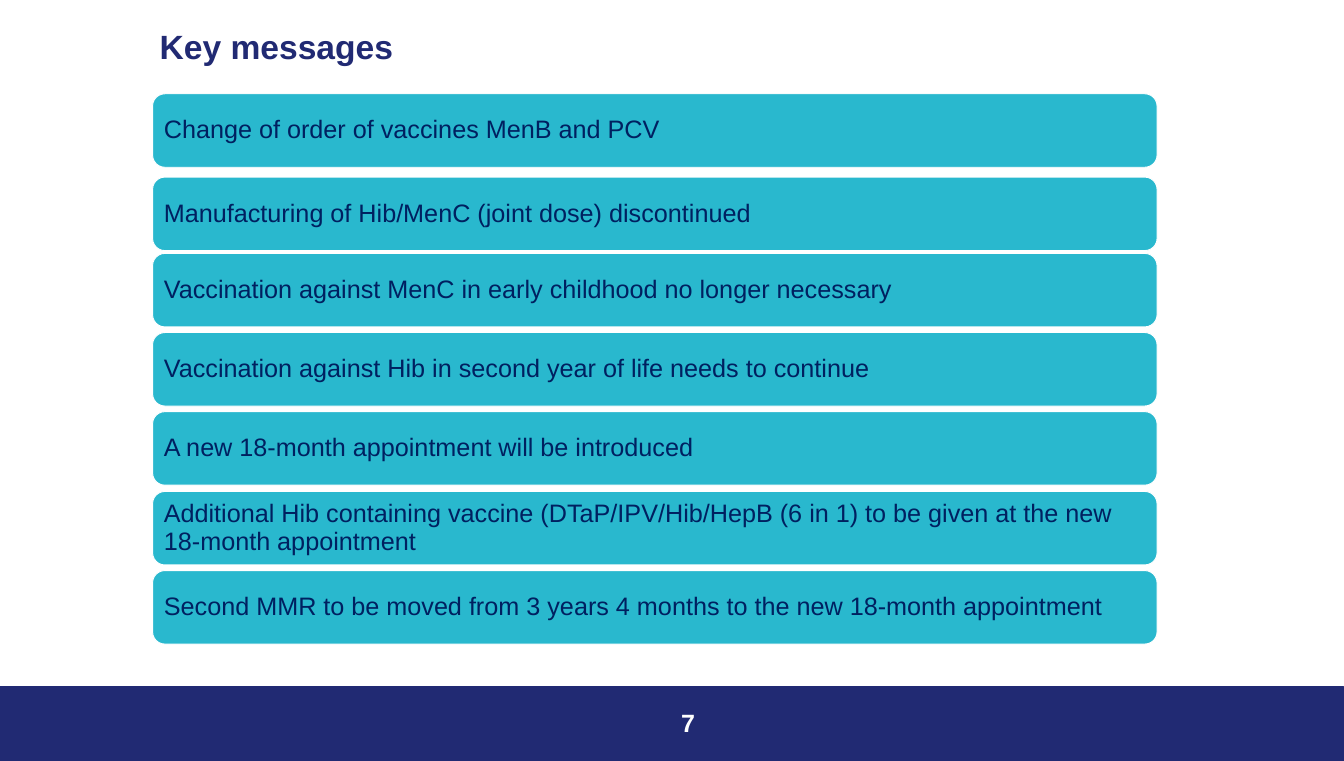
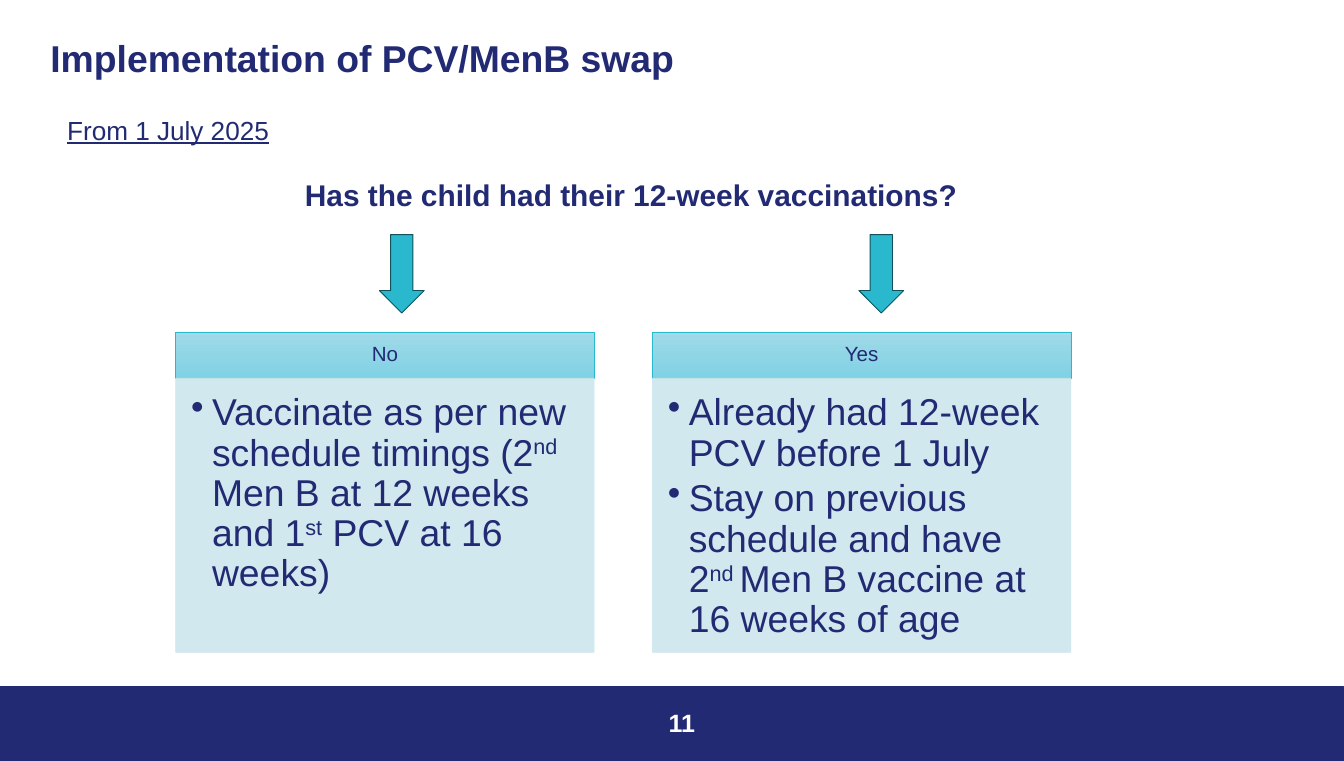
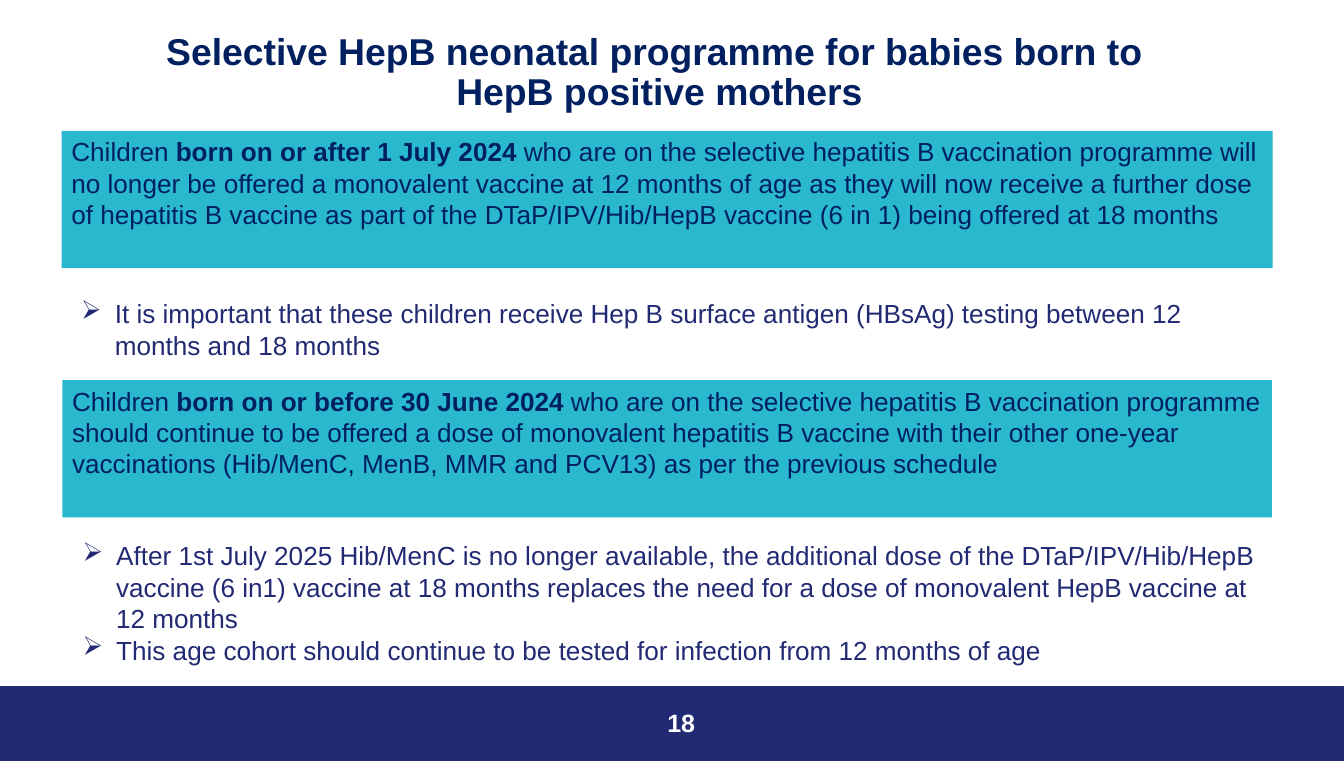
from lxml.etree import SubElement
from pptx import Presentation
from pptx.dml.color import RGBColor
from pptx.enum.shapes import MSO_SHAPE
from pptx.enum.text import MSO_ANCHOR, PP_ALIGN
from pptx.oxml.ns import qn
from pptx.util import Pt

PX = 9525
NAVY = "212A73"
INK = "002060"
TEAL = "29B8CE"
PALE = "CDE6ED"
WHITE = "FFFFFF"


def colour(code):
    return RGBColor.from_string(code)


def place(page, frame, paras=(), kind=None, fill=None, line=None, line_width=1, size=28,
          ink=NAVY, bold=False, align=PP_ALIGN.LEFT, anchor=MSO_ANCHOR.TOP,
          insets=(10, 5, 10, 5), spacing=None, after=None, bullet=None, indent=0):
    left, top, width, height = [value * PX for value in frame]
    if kind is None:
        box = page.shapes.add_textbox(left, top, width, height)
    else:
        box = page.shapes.add_shape(kind, left, top, width, height)
        box.shadow.inherit = False
        if fill:
            box.fill.solid()
            box.fill.fore_color.rgb = colour(fill)
        if line:
            box.line.color.rgb = colour(line)
            box.line.width = Pt(line_width)
        else:
            box.line.fill.background()
    text = box.text_frame
    text.word_wrap = True
    text.vertical_anchor = anchor
    text.margin_left, text.margin_top, text.margin_right, text.margin_bottom = [
        inset * PX for inset in insets]
    for index, spans in enumerate(paras):
        para = text.add_paragraph() if index else text.paragraphs[0]
        para.alignment = align
        if spacing:
            para.line_spacing = spacing
        if after:
            para.space_after = Pt(after)
        if bullet:
            properties = para._p.get_or_add_pPr()
            properties.set("marL", str(indent * PX))
            properties.set("indent", str(-indent * PX))
            SubElement(properties, qn("a:buChar"), char=bullet)
        for words, style in spans:
            if style == "break":
                para.add_line_break()
            span = para.add_run()
            span.text = words
            span.font.name = "Arial"
            span.font.size = Pt(size)
            span.font.color.rgb = colour(ink)
            span.font.bold = bold or style == "bold"
            if style == "underline":
                span.font.underline = True
            if style == "raised":
                span._r.get_or_add_rPr().set("baseline", "30000")
    return box


deck = Presentation()
deck.slide_width = 1920 * PX
deck.slide_height = 1087 * PX

openings = [
    ("7", (218, 38, 1656, 60), 36, NAVY, PP_ALIGN.LEFT, [("Key messages", "")]),
    ("11", (62, 53, 1656, 132), 40, NAVY, PP_ALIGN.LEFT,
     [("Implementation of PCV/MenB swap", "")]),
    ("18", (49, 42, 1786, 155), 40, INK, PP_ALIGN.CENTER,
     [("Selective HepB neonatal programme for babies born to ", ""),
      ("HepB positive mothers", "break")]),
]
for number, frame, size, ink, align, title in openings:
    page = deck.slides.add_slide(deck.slide_layouts[6])
    place(page, (0, 981, 1920, 106), kind=MSO_SHAPE.RECTANGLE, fill=NAVY, line=NAVY)
    place(page, frame, [title], size=size, ink=ink, bold=True, align=align, spacing=0.9)
    place(page, (921, 1006, 82, 58), [[(number, "")]], size=26.8, ink=WHITE, bold=True,
          align=PP_ALIGN.RIGHT)
messages_page, swap_page, hepatitis_page = deck.slides

messages = [
    (134, "Change of order of vaccines MenB and PCV"),
    (253, "Manufacturing of Hib/MenC (joint dose) discontinued"),
    (362, "Vaccination against MenC in early childhood no longer necessary"),
    (475, "Vaccination against Hib in second year of life needs to continue"),
    (588, "A new 18-month appointment will be introduced"),
    (702, "Additional Hib containing vaccine (DTaP/IPV/Hib/HepB (6 in 1) to be given "
          "at the new 18-month appointment"),
    (815, "Second MMR to be moved from 3 years 4 months to the new 18-month appointment"),
]
for top, message in messages:
    place(messages_page, (218, top, 1435, 105), [[(message, "")]],
          kind=MSO_SHAPE.ROUNDED_RECTANGLE, fill=TEAL, line=WHITE, size=27, ink=INK,
          anchor=MSO_ANCHOR.MIDDLE, insets=(11, 11, 11, 11), spacing=0.9)

answers = [
    (251, 542, "No", [
        [("Vaccinate as per new schedule timings (2", ""), ("nd", "raised"),
         (" Men B at 12 weeks and 1", ""), ("st", "raised"), (" PCV at 16 weeks)", "")]]),
    (932, 1227, "Yes", [
        [("Already had 12-week PCV before 1 July", "")],
        [("Stay on previous schedule and have 2", ""), ("nd ", "raised"),
         ("Men B vaccine at 16 weeks of age", "")]]),
]
for left, arrow_left, answer, actions in answers:
    header = place(swap_page, (left, 474, 598, 66), [[(answer, "")]],
                   kind=MSO_SHAPE.RECTANGLE, line=TEAL, line_width=0.5, size=22,
                   align=PP_ALIGN.CENTER, anchor=MSO_ANCHOR.MIDDLE,
                   insets=(16, 10, 16, 10), spacing=0.9)
    header.fill.gradient()
    header.fill.gradient_angle = 270
    for stop, code in zip(header.fill.gradient_stops, ("A1DAE8", "7FD1E4")):
        stop.color.rgb = colour(code)
    panel = place(swap_page, (left, 540, 598, 392), actions, kind=MSO_SHAPE.RECTANGLE,
                  fill=PALE, line=PALE, line_width=0.5, size=40, insets=(22, 22, 30, 34),
                  spacing=0.9, after=6, bullet="•", indent=30)
    for shade in panel._element.spPr.iter(qn("a:srgbClr")):
        SubElement(shade, qn("a:alpha"), val="90000")
    place(swap_page, (arrow_left, 335, 64, 112), kind=MSO_SHAPE.DOWN_ARROW,
          fill=TEAL, line="12515A")

intro = place(swap_page, (86, 158, 1385, 152), [
    [("From 1 July 2025", "underline")],
    [("Has the child had their 12-week vaccinations?", "bold")]])
question = intro.text_frame.paragraphs[1]
question.alignment = PP_ALIGN.CENTER
question.space_before = Pt(33)
question.runs[0].font.size = Pt(32)
question._p.get_or_add_pPr().set("marL", str(247 * PX))

cohorts = [
    ((88, 187, 1730, 196), [
        ("Children ", ""), ("born on or after 1 July 2024 ", "bold"),
        ("who are on the selective hepatitis B vaccination programme will no longer be "
         "offered a monovalent vaccine at 12 months of age as they will now receive a "
         "further dose of hepatitis B vaccine as part of the DTaP/IPV/Hib/HepB vaccine "
         "(6 in 1) being offered at 18 months", "")],
     (106, 420, 1694, 100), [
        "It is important that these children receive Hep B surface antigen (HBsAg) "
        "testing between 12 months and 18 months"]),
    ((89, 543, 1728, 196), [
        ("Children", ""), (" born on or before 30 June 2024", "bold"),
        (" who are on the selective hepatitis B vaccination programme should continue to "
         "be offered a dose of monovalent hepatitis B vaccine with their other one-year "
         "vaccinations (Hib/MenC, MenB, MMR and PCV13) as per the previous schedule", "")],
     (108, 766, 1710, 234), [
        "After 1st July 2025 Hib/MenC is no longer available, the additional dose of the "
        "DTaP/IPV/Hib/HepB vaccine (6 in1) vaccine at 18 months replaces the need for a "
        "dose of monovalent HepB vaccine at 12 months",
        "This age cohort should continue to be tested for infection from 12 months of age"]),
]
for panel_frame, rule, list_frame, points in cohorts:
    place(hepatitis_page, panel_frame, [rule], kind=MSO_SHAPE.RECTANGLE, fill=TEAL, ink=INK,
          insets=(14, 7, 14, 7))
    place(hepatitis_page, list_frame, [[(point, "")] for point in points],
          bullet="➢", indent=48)

deck.save("out.pptx")
